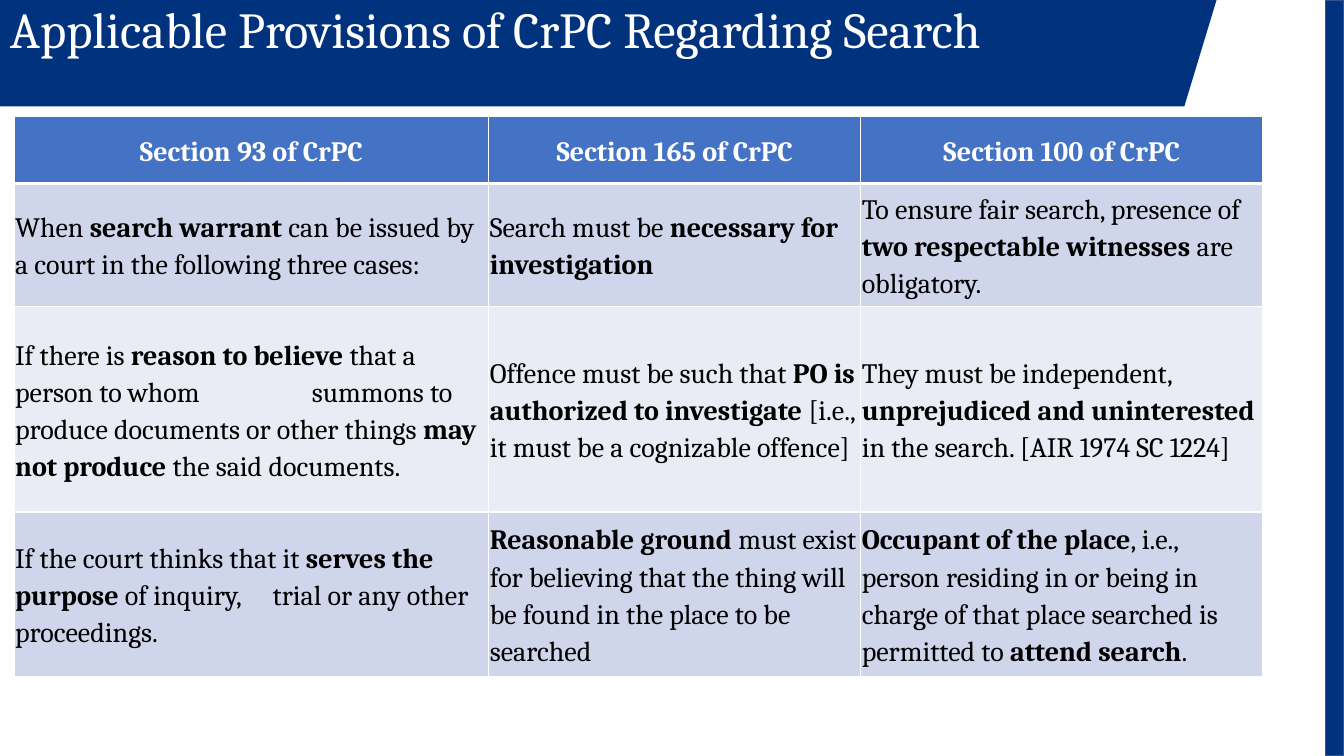
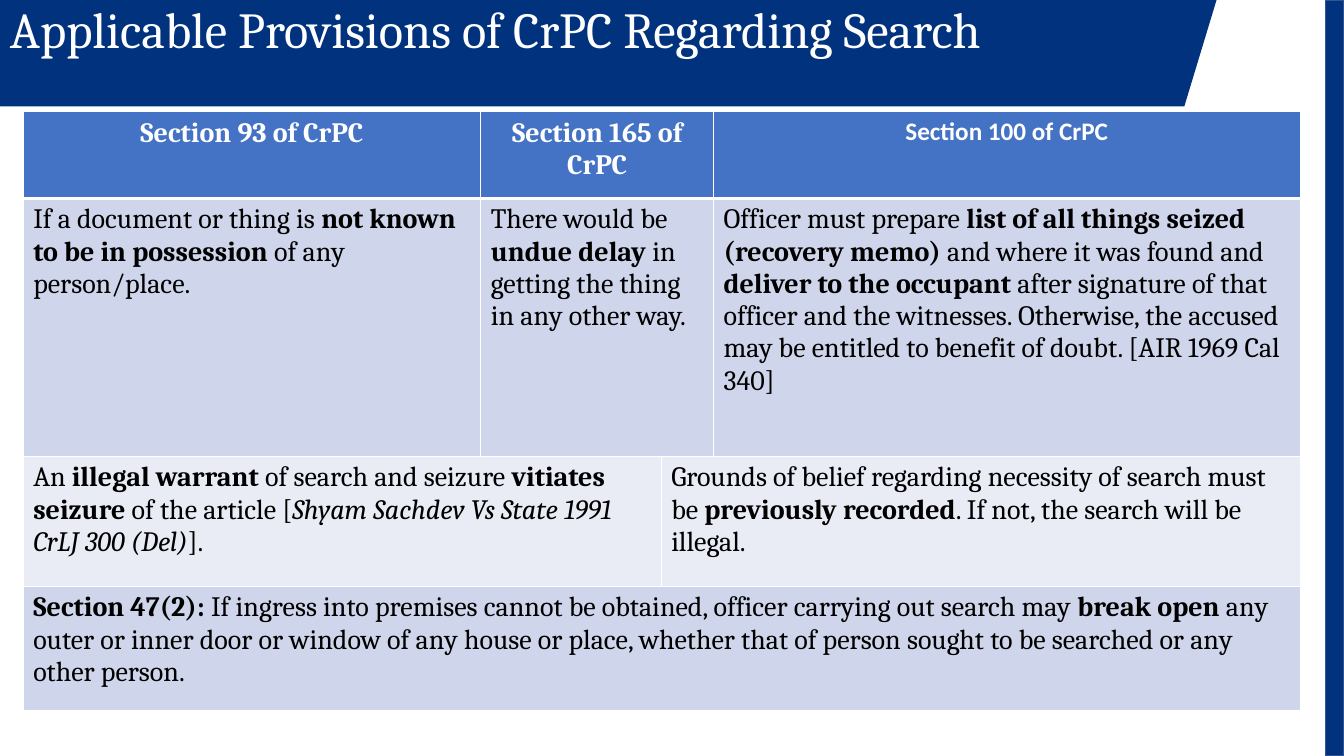
from lxml.etree import SubElement
from pptx import Presentation
from pptx.dml.color import RGBColor
from pptx.enum.shapes import MSO_SHAPE as Preset
from pptx.enum.text import MSO_ANCHOR as Anchor, PP_ALIGN as Align
from pptx.oxml.ns import qn
from pptx.util import Pt

# Shared look
NAVY, NAVY_EDGE, WHITE, BLACK = "00327D", "325491", "FFFFFF", "000000"
HEADER_FILL, BAND_FILLS = "4472C4", ("CFD5EA", "E9EBF5")
TITLE = "Applicable Provisions of CrPC Regarding Search"
HEADINGS = [(f"Section {number} of CrPC", 1) for number in (93, 165, 100)]
BODY_FONT = ("Cambria", 20)


def rgb(value):
    return RGBColor.from_string(value)


def add_runs(paragraph, marked, font, color, bold=False):
    """Add text run by run: *bold* and _italic_."""
    for i, part in enumerate(marked.split("*")):
        for j, piece in enumerate(part.split("_")):
            if piece:
                run = paragraph.add_run()
                run.text = piece
                run.font.name, run.font.size = font[0], Pt(font[1])
                run.font.color.rgb = rgb(color)
                run.font.bold = bold or i % 2 == 1
                run.font.italic = j % 2 == 1


# Contents: each cell is (text, columns spanned)
pages = [
    {
        "origin": (10.08, 82.8),
        "columns": [339.12, 265.68, 287.28],
        "heights": [48.24, 87.84, 146.88, 117.36],
        "insets": (0.72, 0.72),
        "anchor": Anchor.MIDDLE,
        "spacing": (1.15, 8),
        "header_fonts": [BODY_FONT] * 3,
        "tab_stops": {2: 212, 3: 184},
        "rows": [
            HEADINGS,
            [("When *search warrant* can be issued by a court in the following three cases:", 1),
             ("Search must be *necessary for investigation*", 1),
             ("To ensure fair search, presence of *two respectable witnesses* are obligatory.", 1)],
            [("If there is *reason to believe* that a person to whom\tsummons to produce "
              "documents or other things *may not produce* the said documents.", 1),
             ("Offence must be such that *PO is authorized to investigate* "
              "[i.e., it must be a cognizable offence]", 1),
             ("They must be independent, *unprejudiced and uninterested* "
              "in the search. [AIR 1974 SC 1224]", 1)],
            [("If the court thinks that it *serves the purpose* of inquiry,\ttrial "
              "or any other proceedings.", 1),
             ("*Reasonable ground* must exist for believing that the thing will be found "
              "in the place to be searched", 1),
             ("*Occupant of the place*, i.e., person residing in or being in charge of that "
              "place searched is permitted to *attend search*.", 1)],
        ],
    },
    {
        "origin": (16.56, 79.92),
        "columns": [326.88, 128.88, 37.44, 419.04],
        "heights": [61.92, 184.32, 92.88, 88.56],
        "insets": (7.2, 3.6),
        "anchor": Anchor.TOP,
        "spacing": (1, 0),
        "header_fonts": [BODY_FONT, BODY_FONT, ("Calibri", 18)],
        "tab_stops": {},
        "rows": [
            [HEADINGS[0], (HEADINGS[1][0], 2), HEADINGS[2]],
            [("If a document or thing is *not known to be in possession* of any person/place.", 1),
             ("There would be *undue delay* in getting the thing in any other way.", 2),
             ("Officer must prepare *list of all things seized (recovery memo)* and where it was "
              "found and *deliver to the occupant* after signature of that officer and the "
              "witnesses. Otherwise, the accused may be entitled to benefit of doubt. "
              "[AIR 1969 Cal 340]", 1)],
            [("An *illegal warrant* of search and seizure *vitiates seizure* of the article "
              "[_Shyam Sachdev Vs State 1991 CrLJ 300 (Del)_].", 2),
             ("Grounds of belief regarding necessity of search must be *previously recorded*. "
              "If not, the search will be illegal.", 2)],
            [("*Section 47(2):* If ingress into premises cannot be obtained, officer carrying out "
              "search may *break open* any outer or inner door or window of any house or place, "
              "whether that of person sought to be searched or any other person.", 4)],
        ],
    },
]

deck = Presentation()
deck.slide_width, deck.slide_height = Pt(960), Pt(540)

for page in pages:
    slide = deck.slides.add_slide(deck.slide_layouts[6])
    shapes = slide.shapes

    # Title band and side stripe
    outline = shapes.build_freeform(0, 0, scale=Pt(1))
    outline.add_line_segments([(0, 75.6), (846, 75.6), (869, 0)], close=True)
    band = outline.convert_to_shape()
    stripe = shapes.add_shape(Preset.RECTANGLE, Pt(946.8), 0, Pt(13.2), Pt(540))
    for block in (band, stripe):
        block.shadow.inherit = False
        block.fill.solid()
        block.fill.fore_color.rgb = rgb(NAVY)
    band.line.fill.background()
    stripe.line.color.rgb = rgb(NAVY_EDGE)
    stripe.line.width = Pt(1)

    # Title
    title = shapes.add_textbox(0, 0, Pt(790.56), Pt(60.48)).text_frame
    title.word_wrap = True
    heading = title.paragraphs[0]
    heading.line_spacing, heading.space_before = 0.9, Pt(10)
    add_runs(heading, TITLE, ("Cambria", 36), WHITE)

    # Table grid
    columns, heights = page["columns"], page["heights"]
    left, top = page["origin"]
    table = shapes.add_table(len(heights), len(columns), Pt(left), Pt(top),
                             Pt(sum(columns)), Pt(sum(heights))).table
    for column, width in zip(table.columns, columns):
        column.width = Pt(width)
    for row, height in zip(table.rows, heights):
        row.height = Pt(height)

    for r, entries in enumerate(page["rows"]):
        is_header = r == 0

        # Borders, fill and margins of every cell in the row
        for cell in table.rows[r].cells:
            properties = cell._tc.get_or_add_tcPr()
            for side in ("lnL", "lnR", "lnT", "lnB"):
                thick = (side == "lnB" and r == 0) or (side == "lnT" and r == 1)
                edge = SubElement(properties, qn(f"a:{side}"), w=str(Pt(3 if thick else 1)))
                SubElement(SubElement(edge, qn("a:solidFill")), qn("a:srgbClr"), val=WHITE)
            cell.fill.solid()
            cell.fill.fore_color.rgb = rgb(HEADER_FILL if is_header else BAND_FILLS[(r - 1) % 2])
            across, down = page["insets"]
            cell.margin_left = cell.margin_right = Pt(across)
            cell.margin_top = cell.margin_bottom = Pt(down)
            cell.vertical_anchor = page["anchor"]

        # Wording, with merged cells
        c = 0
        for position, (wording, span) in enumerate(entries):
            cell = table.cell(r, c)
            if span > 1:
                cell.merge(table.cell(r, c + span - 1))
            c += span
            paragraph = cell.text_frame.paragraphs[0]
            paragraph.alignment = Align.CENTER if is_header else Align.LEFT
            paragraph.line_spacing, after = page["spacing"]
            paragraph.space_after = Pt(after)
            if "\t" in wording:
                stops = SubElement(paragraph._p.get_or_add_pPr(), qn("a:tabLst"))
                SubElement(stops, qn("a:tab"), pos=str(Pt(page["tab_stops"][r])), algn="l")
            font = page["header_fonts"][position] if is_header else BODY_FONT
            add_runs(paragraph, wording, font, WHITE if is_header else BLACK, bold=is_header)

deck.save("out.pptx")
